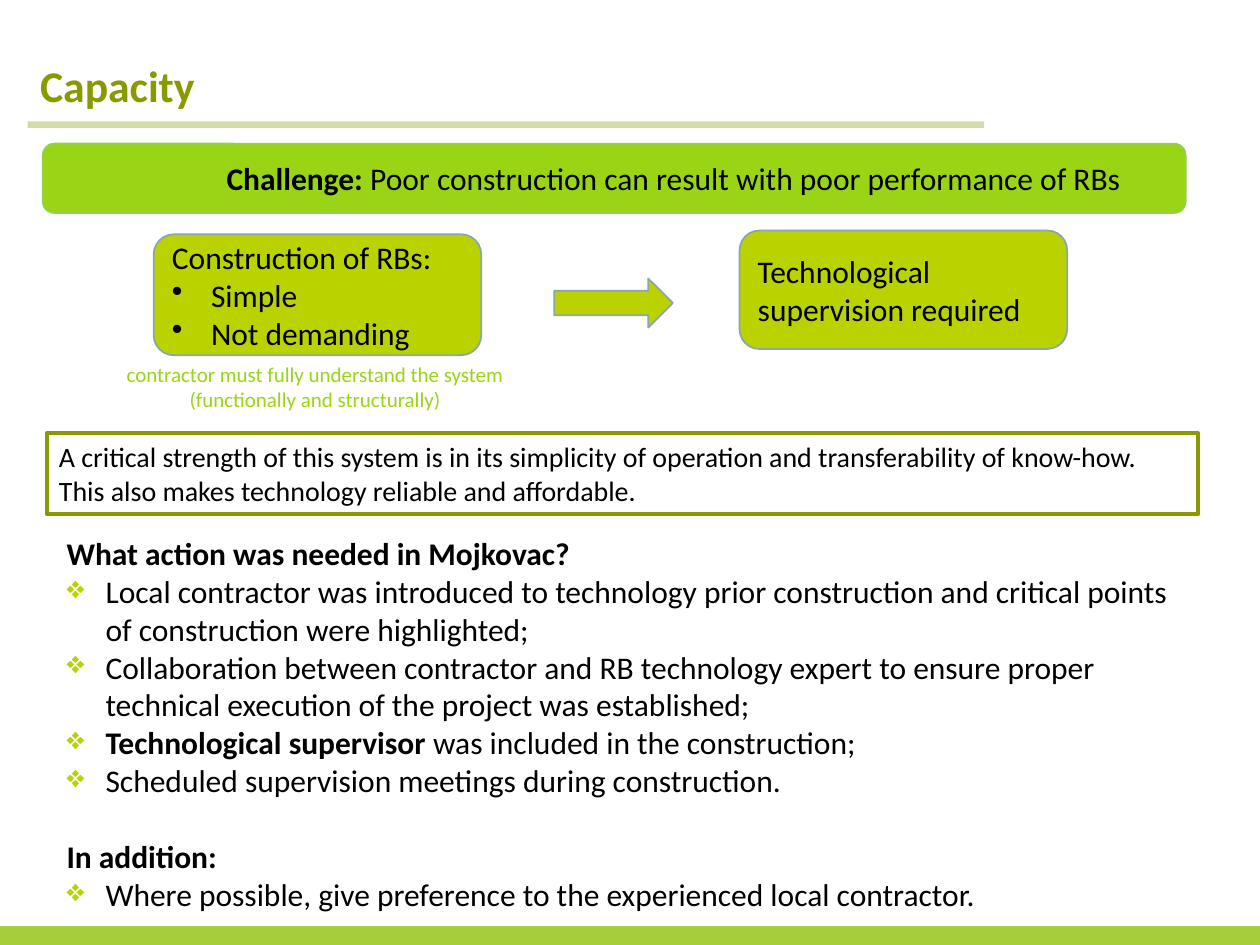
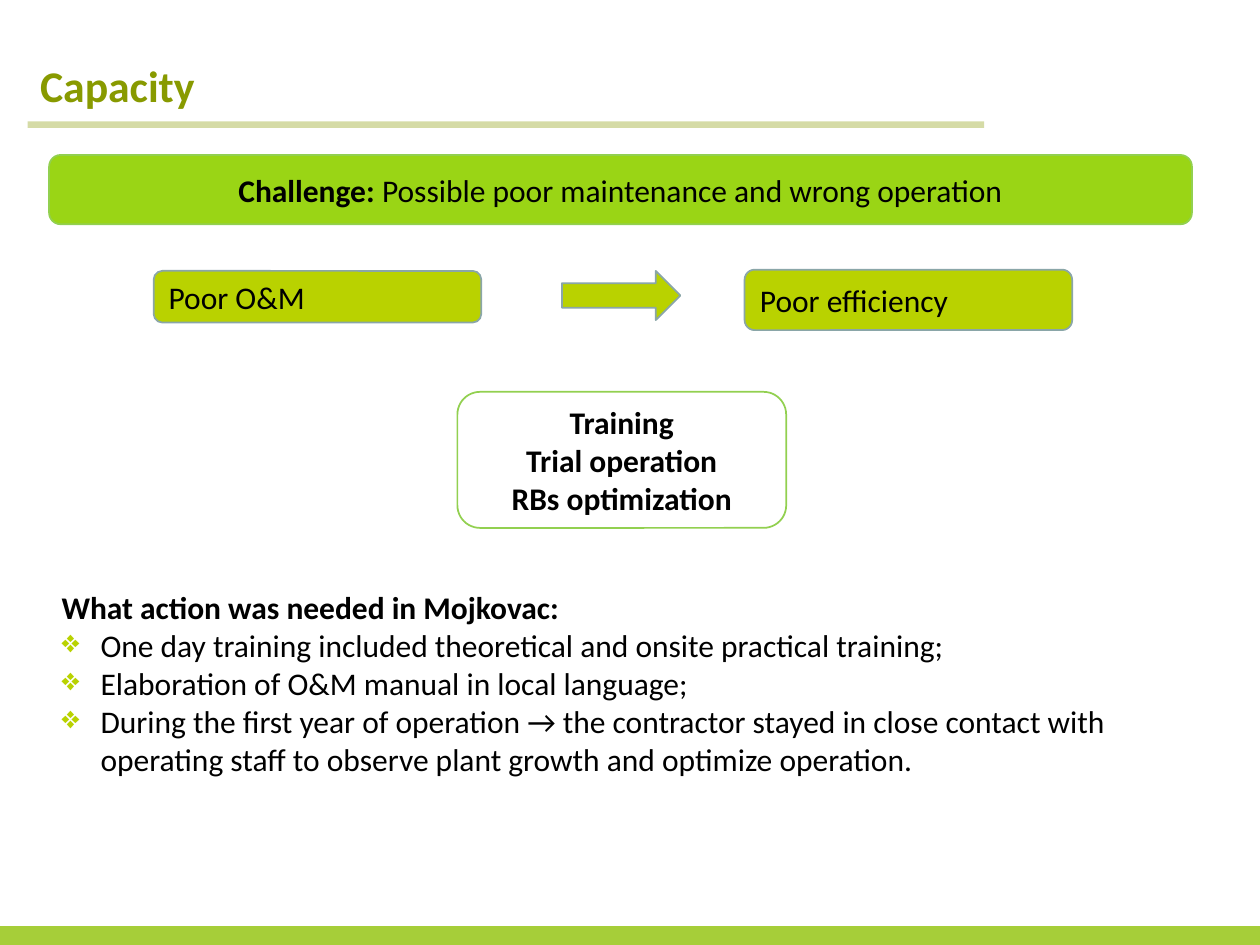
from dataclasses import dataclass

from lxml import etree
from pptx import Presentation
from pptx.dml.color import RGBColor
from pptx.enum.shapes import MSO_CONNECTOR, MSO_SHAPE
from pptx.enum.text import MSO_ANCHOR, PP_ALIGN
from pptx.oxml.ns import qn
from pptx.util import Inches, Pt

RECT = MSO_SHAPE.RECTANGLE
ROUNDED = MSO_SHAPE.ROUNDED_RECTANGLE
ARROW = MSO_SHAPE.RIGHT_ARROW
STRAIGHT = MSO_CONNECTOR.STRAIGHT
TOP, MIDDLE = MSO_ANCHOR.TOP, MSO_ANCHOR.MIDDLE
LEFT, CENTER = PP_ALIGN.LEFT, PP_ALIGN.CENTER

FONT = "Calibri"
BLACK, OLIVE, LIME, GREEN = "000000", "889A00", "B9D200", "9AD515"
EDGE, LEAF, STRIP = "8AA6A8", "92D050", "A6CE39"
CELL = Inches(0.1)
COLUMNS, ROWS = 100, 75
CARD_WIDTH = 26
ARROW_SIZE = (9.4, 3.9)


@dataclass
class Para:
    """One paragraph: (text, bold) runs with bullet and spacing."""
    runs: list
    bullet: str = ""
    bullet_color: str = ""
    before: float = 0
    margin: float = 0


def plain(text):
    """Return a regular paragraph."""
    return Para([(text, False)])


def bold(text, before=0):
    """Return a bold paragraph."""
    return Para([(text, True)], before=before)


def dot(text):
    """Return a paragraph with a round bullet."""
    return Para([(text, False)], bullet="•")


def diamond(text, lead=""):
    """Return a paragraph with a lime diamond bullet and an optional bold lead."""
    runs = [(lead, True)] if lead else []
    return Para(runs + [(text, False)], bullet="❖", bullet_color=LIME)


def rgb(value):
    """Turn a hex string into a colour."""
    return RGBColor.from_string(value)


def cells(*values):
    """Turn grid units into lengths."""
    return [int(value * CELL) for value in values]


def add_bullet(paragraph, char, color):
    """Give a paragraph a hanging bullet."""
    props = paragraph._p.get_or_add_pPr()
    props.set("marL", str(Inches(0.31)))
    props.set("indent", str(-Inches(0.31)))
    if color:
        holder = etree.SubElement(props, qn("a:buClr"))
        etree.SubElement(holder, qn("a:srgbClr")).set("val", color)
    etree.SubElement(props, qn("a:buChar")).set("char", char)


def write(shape, paras, size=18, color=BLACK, align=LEFT, anchor=TOP, leading=None):
    """Fill a shape with paragraphs."""
    frame = shape.text_frame
    frame.word_wrap = True
    frame.vertical_anchor = anchor
    for index, para in enumerate(paras):
        paragraph = frame.paragraphs[0] if index == 0 else frame.add_paragraph()
        paragraph.alignment = align
        if leading:
            paragraph.line_spacing = Pt(leading)
        if para.before:
            paragraph.space_before = Pt(para.before)
        if para.margin:
            paragraph._p.get_or_add_pPr().set("marL", str(Inches(para.margin)))
        if para.bullet:
            add_bullet(paragraph, para.bullet, para.bullet_color)
        for text, is_bold in para.runs:
            run = paragraph.add_run()
            run.text = text
            run.font.name = FONT
            run.font.size = Pt(size)
            run.font.bold = is_bold
            run.font.color.rgb = rgb(color)


def add_panel(slide, kind, box, fill=None, line=None, width=1):
    """Add a preset shape with flat fill and outline."""
    panel = slide.shapes.add_shape(kind, *cells(*box))
    panel.shadow.inherit = False
    if fill:
        panel.fill.solid()
        panel.fill.fore_color.rgb = rgb(fill)
    else:
        panel.fill.background()
    if line:
        panel.line.color.rgb = rgb(line)
        panel.line.width = Pt(width)
    else:
        panel.line.fill.background()
    return panel


def add_text(slide, box, paras, **style):
    """Add a wrapped text box."""
    write(slide.shapes.add_textbox(*cells(*box)), paras, **style)


def add_frame(deck, title):
    """Start a slide with footer strip, title and translucent rule."""
    slide = deck.slides.add_slide(deck.slide_layouts[6])
    add_panel(slide, RECT, (0, ROWS - 1.5, COLUMNS, 1.5), STRIP)
    add_text(slide, (2.2, 6.3, 80.9, 3.3), [bold(title)],
             size=25, color=OLIVE, anchor=MIDDLE, leading=13)
    rule = slide.shapes.add_connector(STRAIGHT, *cells(2.2, 9.9, 78.1, 9.9))
    rule.line.color.rgb = rgb(OLIVE)
    rule.line.width = Pt(3.75)
    tint = rule.line._ln.find(".//" + qn("a:srgbClr"))
    etree.SubElement(tint, qn("a:alpha")).set("val", "35000")
    etree.SubElement(rule._element.spPr, qn("a:effectLst"))
    return slide


def add_challenge(slide, left, top, text, margin=0):
    """Add the green challenge banner."""
    banner = add_panel(slide, ROUNDED, (left, top, 90.7, 5.5), GREEN, LEAF)
    statement = Para([("Challenge: ", True), (text, False)], margin=margin)
    write(banner, [statement], align=CENTER, anchor=MIDDLE)


def add_cause_effect(slide, box, cause, arrow, effect):
    """Place a cause at the left of the box, an effect at the right, an arrow between."""
    left, top, width = box
    sides = ((left, cause), (left + width - CARD_WIDTH, effect))
    for card_left, (drop, height, paras) in sides:
        card = add_panel(slide, ROUNDED, (card_left, top + drop, CARD_WIDTH, height),
                         LIME, EDGE)
        write(card, paras, anchor=MIDDLE)
    shift, drop = arrow
    add_panel(slide, ARROW, (left + shift, top + drop, *ARROW_SIZE), LIME, EDGE)


def build_construction(deck):
    """Build the slide on construction quality."""
    slide = add_frame(deck, "Capacity")
    add_challenge(slide, 3.4, 11.4,
                  "Poor construction can result with poor performance of RBs ", margin=1)
    add_text(slide, (4.3, 41.9, 90.7, 37.4), [
        bold("What action was needed in Mojkovac?"),
        diamond("Local contractor was introduced to technology prior construction "
                "and critical points of construction were highlighted;"),
        diamond("Collaboration between contractor and RB technology expert to ensure "
                "proper technical execution of the project was established;"),
        diamond("was included in the construction;", lead="Technological supervisor "),
        diamond("Scheduled supervision meetings during construction."),
        bold("In addition:", before=22),
        diamond("Where possible, give preference to the experienced local contractor."),
    ])
    add_cause_effect(
        slide, (12.2, 18.3, 72.5),
        cause=(0.3, 9.6, [plain("Construction of RBs:"), dot("Simple"),
                          dot("Not demanding")]),
        arrow=(31.8, 3.8),
        effect=(0, 9.4, [plain("Technological supervision required")]))
    add_text(slide, (8.2, 28.2, 34, 5), [
        plain("contractor must fully understand the system "),
        plain("(functionally and structurally) "),
    ], size=12, color=GREEN, align=CENTER)
    strength = add_panel(slide, RECT, (3.7, 34.4, 91.4, 6.4), line=OLIVE, width=2.25)
    write(strength, [plain(
        "A critical strength of this system is in its simplicity of operation and "
        "transferability of know-how. This also makes technology reliable and "
        "affordable.")], size=16)


def build_maintenance(deck):
    """Build the slide on maintenance and operation."""
    slide = add_frame(deck, "Capacity")
    add_challenge(slide, 3.9, 12.3, "Possible poor maintenance and wrong operation")
    add_text(slide, (3.9, 46.2, 89.3, 16.2), [
        bold("What action was needed in Mojkovac:"),
        diamond("One day training included theoretical and onsite practical training;"),
        diamond("Elaboration of O&M manual in local language;"),
        diamond("During the first year of operation → the contractor stayed in close "
                "contact with operating staff to observe plant growth and optimize "
                "operation."),
    ])
    remedy = add_panel(slide, ROUNDED, (36.3, 31.1, 26.1, 10.8), line=LEAF)
    write(remedy, [bold("Training"), bold("Trial operation"), bold("RBs optimization")],
          align=CENTER, anchor=MIDDLE)
    add_cause_effect(
        slide, (12.2, 21.4, 72.9),
        cause=(0.1, 4.1, [plain("Poor O&M")]),
        arrow=(32.4, 0.1),
        effect=(0, 4.8, [plain("Poor efficiency")]))


def main():
    """Build and save the deck."""
    deck = Presentation()
    deck.slide_width, deck.slide_height = cells(COLUMNS, ROWS)
    build_construction(deck)
    build_maintenance(deck)
    deck.save("out.pptx")


if __name__ == "__main__":
    main()
